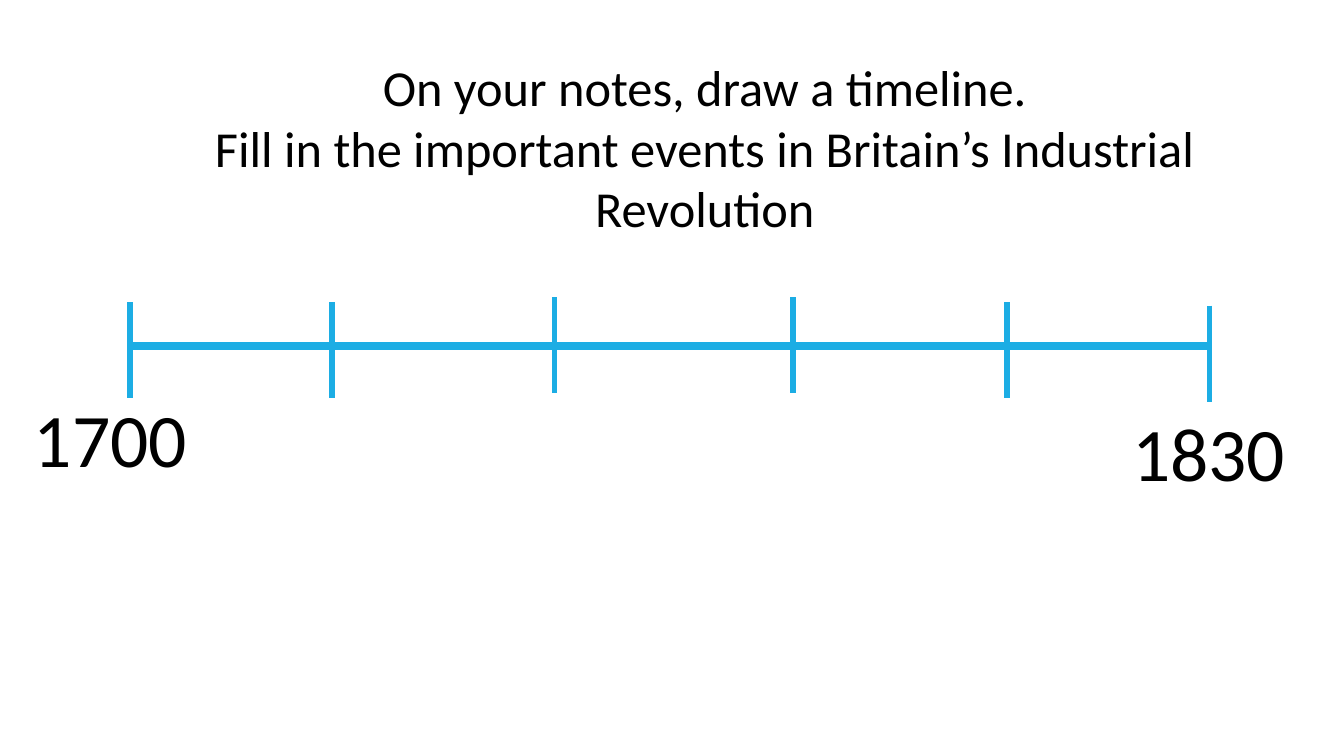
from pptx import Presentation
from pptx.dml.color import RGBColor
from pptx.enum.shapes import MSO_CONNECTOR
from pptx.enum.text import MSO_AUTO_SIZE, PP_ALIGN
from pptx.oxml.ns import qn
from pptx.util import Cm, Pt
from lxml import etree

BLUE = RGBColor(0x1C, 0xAD, 0xE4)
BLACK = RGBColor(0, 0, 0)
FONT = "Calibri"

AXIS_Y = 8.71
TICK_HEIGHT = 2.42
TICKS = [(3.28, 7.62), (8.36, 7.62), (13.97, 7.49),
         (19.99, 7.49), (25.37, 7.62), (30.48, 7.7)]
YEARS = [("1700", 0.41, 9.75), ("1830", 28.09, 10.11)]
INSTRUCTIONS = [
    "On your notes, draw a timeline.",
    "Fill in the important events in Britain’s Industrial Revolution",
]


def add_line(s, x1, y1, x2, y2, width):
    line = s.shapes.add_connector(
        MSO_CONNECTOR.STRAIGHT, Cm(x1), Cm(y1), Cm(x2), Cm(y2))
    line.line.color.rgb = BLUE
    line.line.width = Pt(width)
    etree.SubElement(line._element.spPr, qn("a:effectLst"))


def add_text(s, lines, left, top, width, height, size, wrap):
    sp = s.shapes.add_textbox(Cm(left), Cm(top), Cm(width), Cm(height))
    tf = sp.text_frame
    tf.word_wrap = wrap
    tf.auto_size = MSO_AUTO_SIZE.SHAPE_TO_FIT_TEXT
    for i, text in enumerate(lines):
        p = tf.add_paragraph() if i else tf.paragraphs[0]
        p.alignment = PP_ALIGN.CENTER
        r = p.add_run()
        r.text = text
        r.font.name = FONT
        r.font.size = Pt(size)
        r.font.color.rgb = BLACK


def main():
    prs = Presentation()
    prs.slide_width = Cm(33.87)
    prs.slide_height = Cm(19.05)
    s = prs.slides.add_slide(prs.slide_layouts[6])

    add_line(s, TICKS[0][0], AXIS_Y, TICKS[-1][0], AXIS_Y, 5.75)
    for x, top in TICKS:
        add_line(s, x, top, x, top + TICK_HEIGHT, 4)

    add_text(s, INSTRUCTIONS, 2.79, 1.3, 29.95, 3.33, 36, True)
    for year, left, top in YEARS:
        add_text(s, [year], left, top, 4.75, 2.57, 54, False)

    prs.save("out.pptx")


if __name__ == "__main__":
    main()
